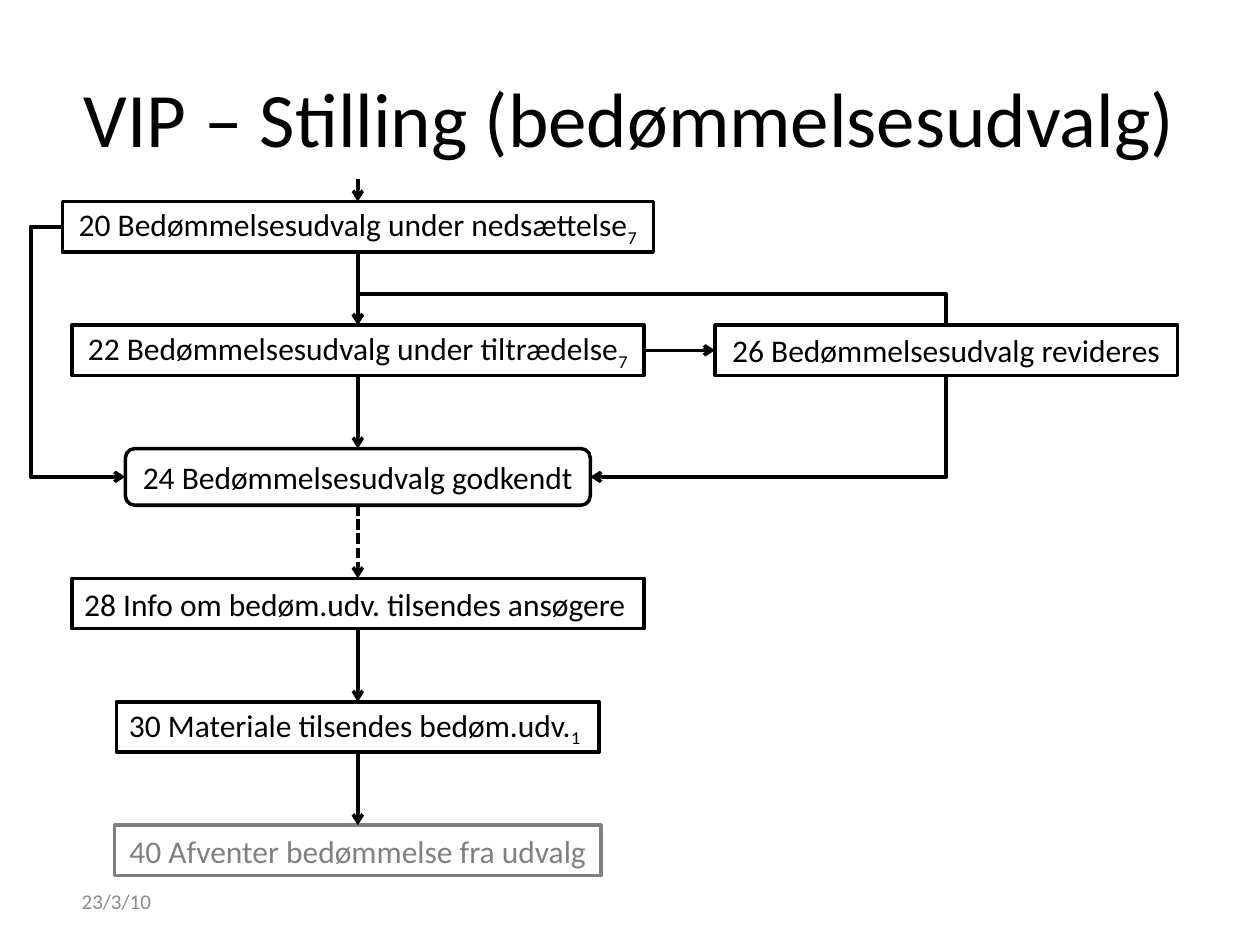
"""Build the flowchart slide for the assessment committee process."""
from dataclasses import dataclass
from itertools import pairwise
from math import cos, radians, sin

from lxml.etree import SubElement
from pptx import Presentation
from pptx.dml.color import RGBColor
from pptx.enum.dml import MSO_LINE
from pptx.enum.shapes import MSO_CONNECTOR as Conn, MSO_SHAPE as Shp
from pptx.enum.text import MSO_ANCHOR as Anchor, PP_ALIGN as Align
from pptx.oxml.ns import qn
from pptx.util import Inches, Pt


@dataclass(frozen=True)
class Theme:
    font: str = "Calibri"
    black: RGBColor = RGBColor(0, 0, 0)
    grey: RGBColor = RGBColor(0x80, 0x80, 0x80)
    date_grey: RGBColor = RGBColor(0x8C, 0x8C, 0x8C)
    title_size: int = 44
    step_size: int = 18
    date_size: int = 12
    line_width: int = 2


@dataclass(frozen=True)
class Step:
    text: str
    top: float
    width: float
    note: str = ""
    center: float = 2.84
    height: float = 0.4
    kind: Shp = Shp.FLOWCHART_PROCESS
    align: Align = Align.CENTER
    color: RGBColor = Theme.black

    @property
    def bottom(self) -> float:
        return self.top + self.height

    @property
    def middle(self) -> float:
        return self.top + self.height / 2

    @property
    def left(self) -> float:
        return self.center - self.width / 2

    @property
    def right(self) -> float:
        return self.center + self.width / 2


@dataclass(frozen=True)
class Arrow:
    start: tuple[float, float]
    end: tuple[float, float]
    kind: Conn = Conn.STRAIGHT
    rotation: int = 0
    preset: str = ""
    bend: float | None = None
    dashed: bool = False


THEME = Theme()
APPOINT = Step("20 Bedømmelsesudvalg under nedsættelse", 1.6, 4.69, "7")
ACCEDE = Step("22 Bedømmelsesudvalg under tiltrædelse", 2.58, 4.54, "7")
APPROVED = Step("24 Bedømmelsesudvalg godkendt", 3.56, 3.69, height=0.45,
                kind=Shp.FLOWCHART_ALTERNATE_PROCESS)
INFORM = Step("28 Info om bedøm.udv. tilsendes ansøgere", 4.59, 4.54, align=Align.LEFT)
MATERIAL = Step("30 Materiale tilsendes bedøm.udv.", 5.57, 3.83, "1", align=Align.LEFT)
AWAIT = Step("40 Afventer bedømmelse fra udvalg", 6.55, 3.86, color=THEME.grey)
REVISE = Step("26 Bedømmelsesudvalg revideres", 2.58, 3.67, center=7.51)
FLOW = (APPOINT, ACCEDE, APPROVED, INFORM, MATERIAL, AWAIT)

ARROWS = (
    Arrow((APPOINT.center, 1.42), (APPOINT.center, APPOINT.top)),
    *(Arrow((a.center, a.bottom), (b.center, b.top), dashed=a is APPROVED)
      for a, b in pairwise(FLOW)),
    Arrow((ACCEDE.right, ACCEDE.middle), (REVISE.left, REVISE.middle)),
    Arrow((REVISE.center, REVISE.top + 0.01), (ACCEDE.center, ACCEDE.top),
          Conn.ELBOW, 270, bend=26),
    Arrow((REVISE.center, REVISE.bottom), (APPROVED.right, APPROVED.middle),
          Conn.ELBOW, 90, "bentConnector2"),
    Arrow((APPOINT.left, APPOINT.middle), (APPROVED.left, APPROVED.middle),
          Conn.ELBOW, bend=-0.5),
)


def format_run(r, size: int, color: RGBColor) -> None:
    """Apply the theme font to one run."""
    r.font.name = THEME.font
    r.font.size = Pt(size)
    r.font.color.rgb = color


def add_label(slide, text: str, box: tuple[float, ...], size: int,
              color: RGBColor, align: Align) -> None:
    """Add a vertically centred text box."""
    tf = slide.shapes.add_textbox(*map(Inches, box)).text_frame
    tf.word_wrap = True
    tf.vertical_anchor = Anchor.MIDDLE
    tf.text = text
    p = tf.paragraphs[0]
    p.alignment = align
    format_run(p.runs[0], size, color)


def add_step(slide, step: Step) -> None:
    """Draw an outlined step with an optional subscript note."""
    box = (step.left, step.top, step.width, step.height)
    sp = slide.shapes.add_shape(step.kind, *map(Inches, box))
    sp.shadow.inherit = False
    sp.fill.background()
    sp.line.color.rgb = step.color
    sp.line.width = Pt(THEME.line_width)
    tf = sp.text_frame
    tf.word_wrap = False
    tf.vertical_anchor = Anchor.MIDDLE
    tf.text = step.text
    p = tf.paragraphs[0]
    p.alignment = step.align
    if step.note:
        r = p.add_run()
        r.text = step.note
        r.font._element.set("baseline", "-25000")
    for r in p.runs:
        format_run(r, THEME.step_size, step.color)


def unrotate(arrow: Arrow) -> list[Inches]:
    """Return the connector's end points before its rotation."""
    (x1, y1), (x2, y2) = arrow.start, arrow.end
    cx, cy = (x1 + x2) / 2, (y1 + y2) / 2
    c, s = cos(radians(arrow.rotation)), sin(radians(arrow.rotation))
    dx, dy = (x1 - cx) * c + (y1 - cy) * s, (y1 - cy) * c - (x1 - cx) * s
    return [Inches(v) for v in (cx + dx, cy + dy, cx - dx, cy - dy)]


def add_arrow(slide, arrow: Arrow) -> None:
    """Draw a straight or bent connector with an open arrowhead."""
    cn = slide.shapes.add_connector(arrow.kind, *unrotate(arrow))
    cn.line.color.rgb = THEME.black
    cn.line.width = Pt(THEME.line_width)
    if arrow.dashed:
        cn.line.dash_style = MSO_LINE.SQUARE_DOT
    sp_pr = cn._element.spPr
    SubElement(cn.line._get_or_add_ln(), qn("a:tailEnd"), type="arrow")
    SubElement(sp_pr, qn("a:effectLst"))
    if arrow.rotation:
        sp_pr.find(qn("a:xfrm")).set("rot", str(arrow.rotation * 60000))
    geom = sp_pr.find(qn("a:prstGeom"))
    if arrow.preset:
        geom.set("prst", arrow.preset)
    if arrow.bend is not None:
        guides = geom.find(qn("a:avLst"))
        if guides is None:
            guides = SubElement(geom, qn("a:avLst"))
        SubElement(guides, qn("a:gd"), name="adj1", fmla=f"val {round(arrow.bend * 100000)}")


def main() -> None:
    """Build and save the slide."""
    prs = Presentation()
    prs.slide_width, prs.slide_height = Inches(10), Inches(7.5)
    slide = prs.slides.add_slide(prs.slide_layouts[6])
    add_label(slide, "VIP – Stilling (bedømmelsesudvalg)", (0.5, 0.3, 9, 1.25),
              THEME.title_size, THEME.black, Align.CENTER)
    for step in (*FLOW, REVISE):
        add_step(slide, step)
    for arrow in ARROWS:
        add_arrow(slide, arrow)
    add_label(slide, "23/3/10", (0.55, 6.95, 2.33, 0.4),
              THEME.date_size, THEME.date_grey, Align.LEFT)
    prs.save("out.pptx")


if __name__ == "__main__":
    main()
